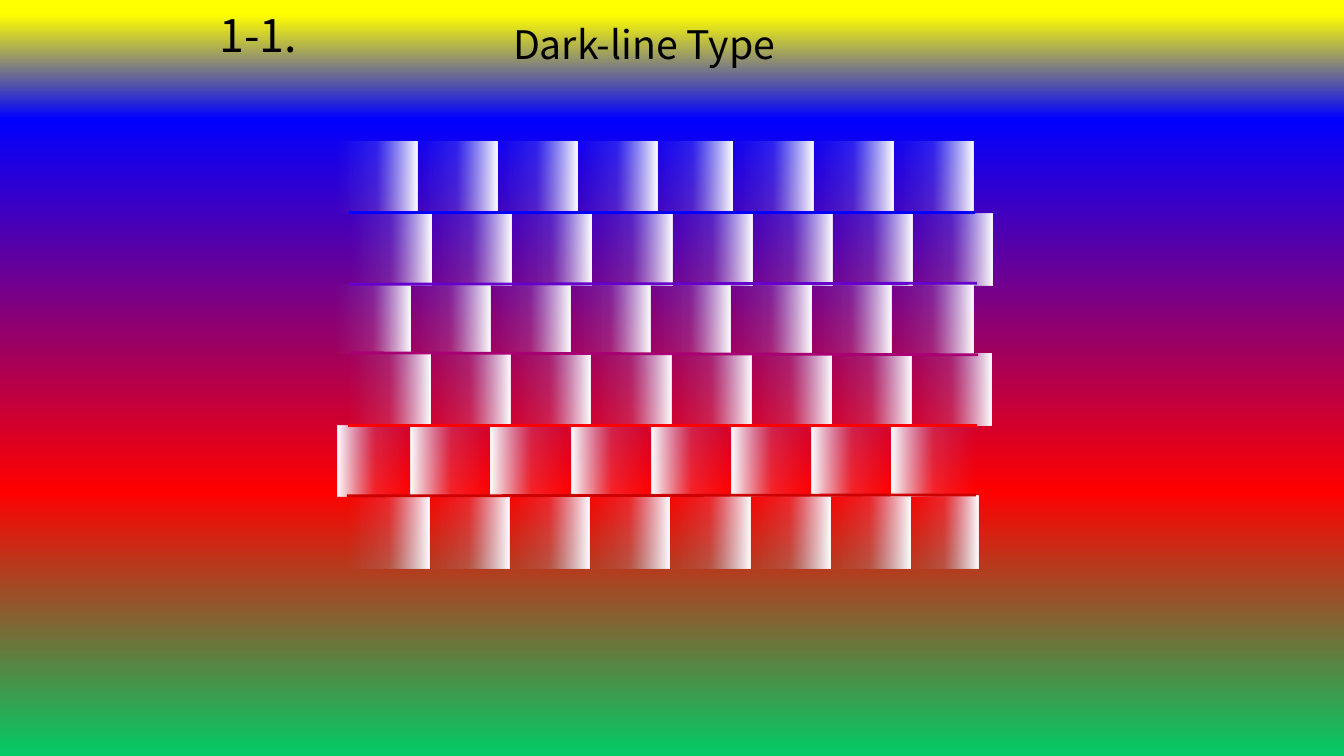
from lxml.etree import SubElement
from pptx import Presentation
from pptx.dml.color import RGBColor
from pptx.enum.shapes import MSO_CONNECTOR, MSO_SHAPE
from pptx.enum.text import MSO_ANCHOR, PP_ALIGN
from pptx.oxml.ns import qn
from pptx.util import Inches, Pt

FONT = "Noto Sans CJK JP"
COLORS = {
    "black": "000000", "green": "00CC66", "red": "FF0000", "blue": "0000FF",
    "yellow": "FFFF00", "pale": "96ABEA", "paler": "C0CBF0", "white": "FFFFFF",
    "violet": "6600CC", "plum": "A80074", "dark red": "CC0000",
}
# Gradient stops: position %, colour, opacity %
SKY_STOPS = [(3, "green", 100), (36, "red", 100), (82, "blue", 100), (95, "yellow", 100)]
TILE_STOPS = [(0, "pale", 0), (50, "paler", 17), (100, "white", 100)]

COLUMNS, PITCH, TILE_W = 8, 0.795, 0.8
# Row: top, height, first left, first width, last width, shift of right half, white on left
ROWS = [
    (1.4, 0.71, 3.34, TILE_W, TILE_W, -0.05, False),
    (2.12, 0.71, 3.48, TILE_W, TILE_W, 0, False),
    (2.82, 0.69, 3.33, 0.74, 0.82, 0, False),
    (3.51, 0.71, 3.47, TILE_W, TILE_W, 0, False),
    (4.22, 0.71, 3.35, 0.73, 0.83, 0, True),
    (4.92, 0.72, 3.46, TILE_W, 0.68, 0, False),
]
# Mortar line: x and y of the start, x and y of the end, colour
MORTAR = [
    (3.46, 2.11, 9.67, 2.11, "blue"),
    (3.46, 2.82, 9.69, 2.81, "violet"),
    (3.46, 3.5, 9.7, 3.52, "plum"),
    (3.45, 4.22, 9.69, 4.22, "red"),
    (3.44, 4.92, 9.68, 4.91, "dark red"),
]


def set_gradient(sp, stops, angle):
    """Fill with a linear gradient; angle is clockwise degrees."""
    sp.fill.gradient()
    grad = sp._element.spPr.find(qn("a:gradFill"))
    for child in list(grad):
        grad.remove(child)
    gs_lst = SubElement(grad, qn("a:gsLst"))
    for pos, color, opacity in stops:
        gs = SubElement(gs_lst, qn("a:gs"), pos=str(pos * 1000))
        clr = SubElement(gs, qn("a:srgbClr"), val=COLORS[color])
        if opacity < 100:
            SubElement(clr, qn("a:alpha"), val=str(opacity * 1000))
    SubElement(grad, qn("a:lin"), ang=str(angle * 60000), scaled="0")


def add_gradient_rect(shapes, box, stops, angle):
    sp = shapes.add_shape(MSO_SHAPE.RECTANGLE, *map(Inches, box))
    sp.shadow.inherit = False
    sp.line.fill.background()
    set_gradient(sp, stops, angle)


def add_label(shapes, box, text, size, align, anchor):
    tf = shapes.add_textbox(*map(Inches, box)).text_frame
    tf.word_wrap = True
    tf.vertical_anchor = anchor
    tf.text = text
    p = tf.paragraphs[0]
    p.alignment = align
    font = p.runs[0].font
    font.name, font.size = FONT, Pt(size)
    font.color.rgb = RGBColor.from_string(COLORS["black"])


def add_tile_row(shapes, top, height, left, first_w, last_w, shift, white_left):
    """Lay out one course; the tile with its white edge at a joint lies on top."""
    second = left + first_w - 0.005
    order = range(COLUMNS) if white_left else reversed(range(COLUMNS))
    for col in order:
        x = left if col == 0 else second + (col - 1) * PITCH
        if col >= COLUMNS // 2:
            x += shift
        width = {0: first_w, COLUMNS - 1: last_w}.get(col, TILE_W)
        add_gradient_rect(shapes, (x, top, width, height), TILE_STOPS,
                          180 if white_left else 0)


def add_mortar_line(shapes, x1, y1, x2, y2, color):
    line = shapes.add_connector(MSO_CONNECTOR.STRAIGHT, *map(Inches, (x1, y1, x2, y2)))
    line.line.color.rgb = RGBColor.from_string(COLORS[color])
    line.line.width = Pt(2)
    SubElement(line._element.spPr, qn("a:effectLst"))


def add_wall(shapes):
    tiles = shapes.add_group_shape().shapes
    for row in ROWS:
        add_tile_row(tiles, *row)
    mortar = shapes.add_group_shape().shapes
    for line in MORTAR:
        add_mortar_line(mortar, *line)


def main():
    prs = Presentation()
    prs.slide_width, prs.slide_height = Inches(13.33), Inches(7.5)
    shapes = prs.slides.add_slide(prs.slide_layouts[6]).shapes
    add_gradient_rect(shapes, (0, -0.26, 13.33, 8.01), SKY_STOPS, 270)
    add_label(shapes, (4.99, 0.15, 4.07, 0.7), "Dark-line Type", 28,
              PP_ALIGN.JUSTIFY, MSO_ANCHOR.TOP)
    add_label(shapes, (1.64, -0.55, 1.84, 1.78), "1-1.", 32,
              PP_ALIGN.CENTER, MSO_ANCHOR.MIDDLE)
    add_wall(shapes)
    prs.save("out.pptx")


if __name__ == "__main__":
    main()
